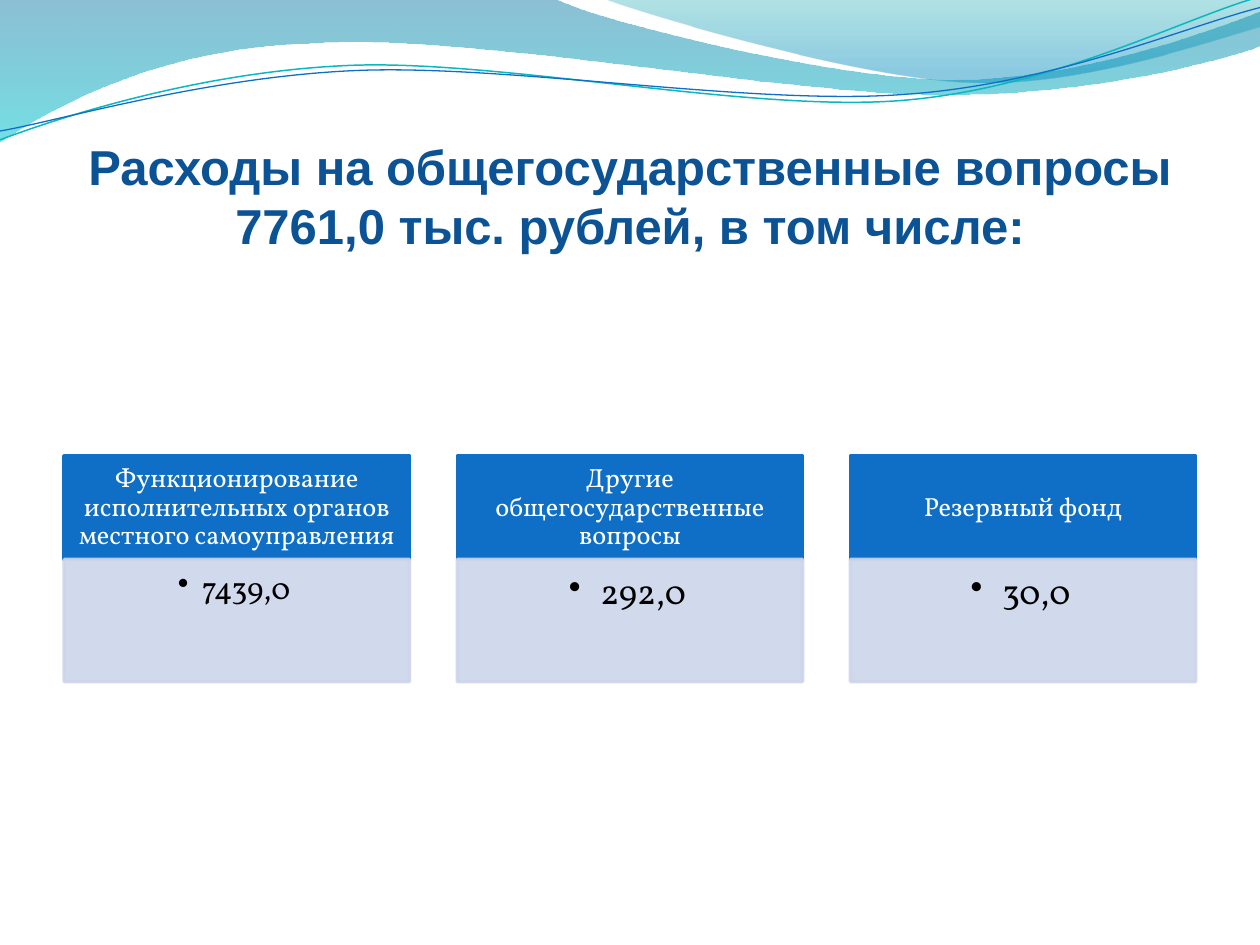
from dataclasses import dataclass

from lxml import etree
from pptx import Presentation
from pptx.dml.color import RGBColor
from pptx.enum.shapes import MSO_SHAPE
from pptx.enum.text import MSO_ANCHOR, MSO_AUTO_SIZE, PP_ALIGN
from pptx.oxml.ns import qn
from pptx.util import Inches, Pt

RECTANGLE = MSO_SHAPE.RECTANGLE
TOP, MIDDLE, BOTTOM = MSO_ANCHOR.TOP, MSO_ANCHOR.MIDDLE, MSO_ANCHOR.BOTTOM
CENTER = PP_ALIGN.CENTER
NO_AUTOFIT = MSO_AUTO_SIZE.NONE


@dataclass
class Theme:
    title_font: str = "Arial"
    body_font: str = "Vollkorn"
    title_size: int = 28
    heading_size: int = 15
    title: str = "0B5394"
    header: str = "0F6FC6"
    panel: str = "CCD5EA"
    white: str = "FFFFFF"
    black: str = "000000"
    teal_line: str = "0AB8BF"


theme = Theme()


def trace_wave(shapes, start, segments, closed):
    places = [(Inches(segment[i]), Inches(segment[i + 1]))
              for segment in segments for i in range(0, len(segment), 2)]
    builder = shapes.build_freeform(Inches(start[0]), Inches(start[1]), scale=1.0)
    builder.add_line_segments(places, close=closed)
    wave = builder.convert_to_shape()
    wave.shadow.inherit = False
    lines = iter(list(wave.element.spPr.iter(qn("a:lnTo"))))
    for segment in segments:
        first = next(lines)
        if len(segment) == 6:
            first.tag_name = None
            curve = etree.Element(qn("a:cubicBezTo"))
            first.addprevious(curve)
            for line in (first, next(lines), next(lines)):
                curve.append(line[0])
                line.getparent().remove(line)
    return wave


def write_text(shape, text, insets, anchor, spacing, font):
    frame = shape.text_frame
    sides = ("margin_left", "margin_top", "margin_right", "margin_bottom")
    settings = dict(zip(sides, map(Inches, insets)))
    settings |= {"word_wrap": True, "auto_size": NO_AUTOFIT, "vertical_anchor": anchor}
    for name, value in settings.items():
        setattr(frame, name, value)
    para = frame.paragraphs[0]
    para.alignment = CENTER
    para.line_spacing = spacing
    span = para.add_run()
    span.text = text
    color = font.pop("color")
    for name, value in font.items():
        setattr(span.font, name, value)
    span.font.color.rgb = RGBColor.from_string(color)
    return para


deck = Presentation()
deck.slide_width, deck.slide_height = Inches(10), Inches(7.5)
page = deck.slides.add_slide(deck.slide_layouts[5])
title = page.shapes.title

bands = [
    ((0, 0),
     [(4.4, -0.01), (4.76, 0.17, 6.64, 0.63, 7.58, 0.63),
      (8.53, 0.63, 9.58, 0.26, 10, 0.09), (10.01, 0.36),
      (9.83, 0.44, 8.7, 0.76, 7.46, 0.75), (6.22, 0.75, 3.82, 0.28, 2.57, 0.34),
      (1.29, 0.36, 0.46, 0.83, -0.01, 1.13)],
     [(0, "0074A1", 45), (100, "00C6CF", 55)]),
    ((4.79, -0.01),
     [(5.09, 0.11, 6.82, 0.62, 7.69, 0.65), (8.56, 0.69, 9.61, 0.32, 10, 0.21),
      (10, 0)],
     [(0, "00A1A9", 30), (80, "008BBF", 45)]),
]
for start, segments, stops in bands:
    band = trace_wave(page.shapes, start, segments, True)
    band.line.fill.background()
    band.fill.gradient()
    band.fill.gradient_angle = 270
    stop_list = band.element.spPr.find(".//" + qn("a:gsLst"))
    for old_stop in list(stop_list):
        stop_list.remove(old_stop)
    for position, color, opacity in stops:
        stop = etree.SubElement(stop_list, qn("a:gs"), pos=str(position * 1000))
        tint = etree.SubElement(stop, qn("a:srgbClr"), val=color)
        etree.SubElement(tint, qn("a:alpha"), val=str(opacity * 1000))

strands = [
    ((0, 1.11),
     [(0.48, 0.93, 1.58, 0.57, 2.77, 0.52), (3.95, 0.47, 5.93, 0.89, 7.13, 0.8),
      (8.33, 0.71, 9.38, 0.15, 9.98, -0.02)], theme.teal_line, 0.85),
    ((0, 1.04),
     [(0.47, 0.96, 1.64, 0.61, 2.83, 0.56), (4.03, 0.51, 5.97, 0.84, 7.17, 0.75),
      (8.36, 0.67, 9.41, 0.21, 10, 0.06)], theme.header, 0.75),
]
for start, segments, color, width in strands:
    strand = trace_wave(page.shapes, start, segments, False)
    strand.fill.background()
    strand.line.color.rgb = RGBColor.from_string(color)
    strand.line.width = Pt(width)

title.element.getparent().append(title.element)
title.left, title.top = Inches(0.5), Inches(0.77)
title.width, title.height = Inches(9), Inches(1.25)
write_text(title, "Расходы на общегосударственные вопросы 7761,0 тыс. рублей, в том числе:",
           (0, 0.05, 0, 0), BOTTOM, 1.0,
           {"name": theme.title_font, "size": Pt(theme.title_size), "bold": True,
            "color": theme.title})

left, column_pitch, column_width = 0.51, 3.12, 2.74
header_top, header_height, panel_height = 3.62, 0.82, 0.97
large_value = (20, 0.25, (0.12, 0.12, 0.16, 0.17))
columns = [
    ("Функционирование исполнительных органов местного самоуправления", "7439,0",
     (18, 0.19, (0.1, 0.1, 0.14, 0.16))),
    ("Другие общегосударственные вопросы", "292,0", large_value),
    ("Резервный фонд", "30,0", large_value),
]
for index, (heading, amount, (size, indent, insets)) in enumerate(columns):
    x = Inches(left + index * column_pitch)
    header = page.shapes.add_shape(
        RECTANGLE, x, Inches(header_top), Inches(column_width), Inches(header_height))
    panel = page.shapes.add_shape(
        RECTANGLE, x, Inches(header_top + header_height), Inches(column_width),
        Inches(panel_height))
    for box, color in ((header, theme.header), (panel, theme.panel)):
        box.shadow.inherit = False
        box.fill.solid()
        box.fill.fore_color.rgb = box.line.color.rgb = RGBColor.from_string(color)
        box.line.width = Pt(2)
    for tint in panel.element.spPr.iter(qn("a:srgbClr")):
        etree.SubElement(tint, qn("a:alpha"), val="90000")
    write_text(header, heading, (0.1, 0.07, 0.1, 0.07), MIDDLE, 0.9,
               {"name": theme.body_font, "size": Pt(theme.heading_size),
                "color": theme.white})
    para = write_text(panel, amount, insets, TOP, 0.9,
                      {"name": theme.body_font, "size": Pt(size), "color": theme.black})
    para.level = 1
    properties = para._p.get_or_add_pPr()
    properties.set("marL", str(Inches(indent)))
    properties.set("indent", str(-Inches(indent)))
    etree.SubElement(properties, qn("a:buChar"), char="•")

deck.save("out.pptx")
